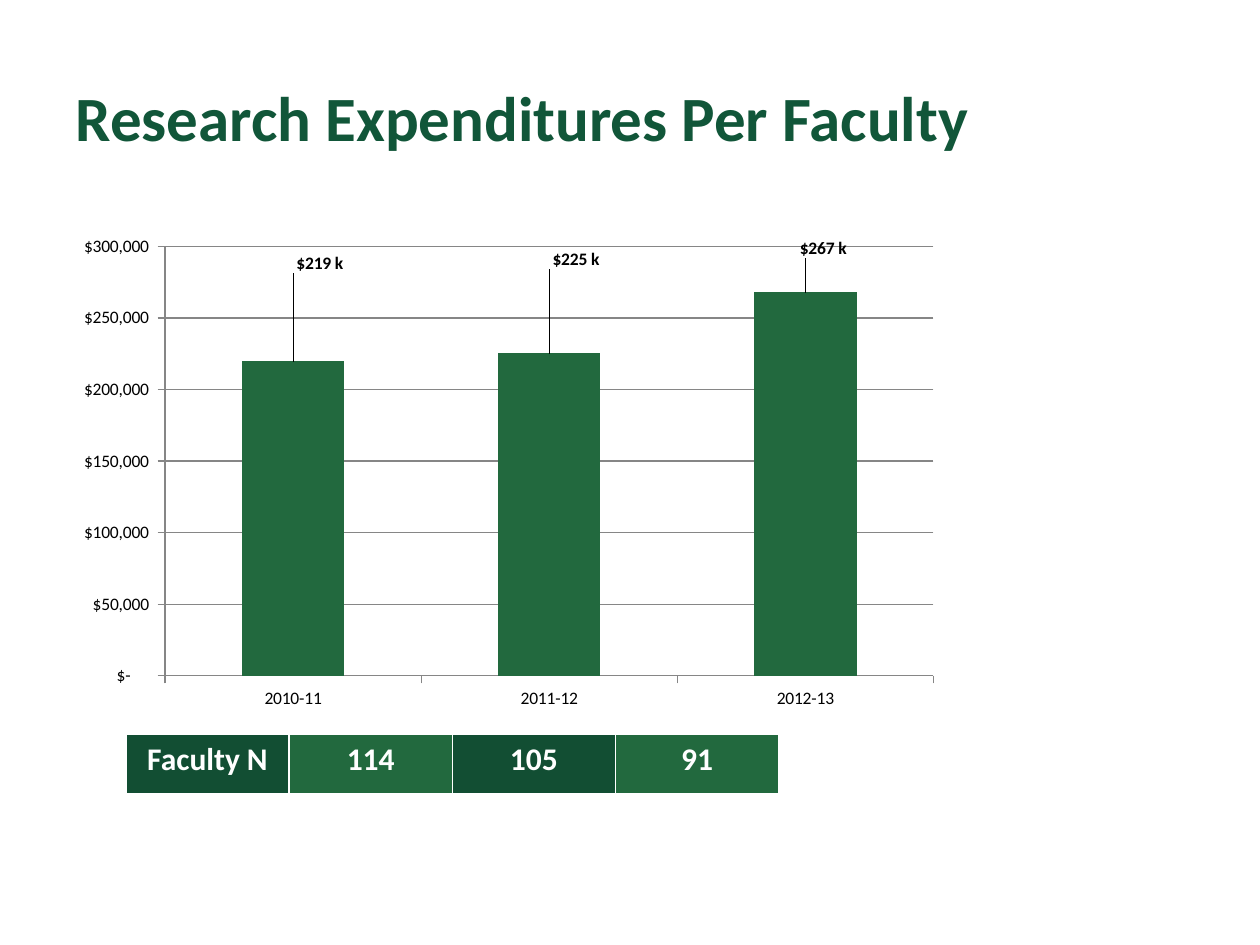
from dataclasses import dataclass

from lxml.etree import SubElement
from pptx import Presentation
from pptx.chart.data import CategoryChartData
from pptx.dml.color import RGBColor
from pptx.enum.chart import XL_CHART_TYPE as ChartType
from pptx.enum.chart import XL_LABEL_POSITION as LabelPosition
from pptx.enum.chart import XL_TICK_MARK as TickMark
from pptx.enum.text import MSO_ANCHOR as Anchor
from pptx.enum.text import PP_ALIGN as Align
from pptx.oxml.ns import qn
from pptx.util import Inches, Pt


@dataclass(frozen=True)
class Theme:
    font: str = "Calibri"
    title: str = "115639"
    dark: str = "124E33"
    bar: str = "22693E"
    grid: str = "868686"
    ink: str = "000000"
    paper: str = "FFFFFF"
    title_size: int = 36
    table_size: int = 18
    chart_size: int = 10


@dataclass(frozen=True)
class Area:
    x: float
    y: float
    w: float
    h: float

    def box(self) -> tuple[int, int, int, int]:
        return (int(WIDTH * self.x), int(HEIGHT * self.y),
                int(WIDTH * self.w), int(HEIGHT * self.h))


@dataclass(frozen=True)
class Year:
    name: str
    spending: int
    label: str
    faculty: str
    shift_x: float
    shift_y: float


THEME = Theme()
WIDTH, HEIGHT = Inches(10), Inches(7.5)
TITLE_AREA = Area(0.05, 0.04, 0.9, 0.167)
CHART_AREA = Area(0.05, 0.24, 0.705, 0.519)
TABLE_AREA = Area(0.1, 0.777, 0.518, 0.065)
PLOT_AREA = {"x": 0.115, "y": 0.04, "w": 0.865, "h": 0.876}
DOLLARS = r'_("$"* #,##0_);_("$"* \(#,##0\);_("$"* "-"??_);_(@_)'
YEARS = [
    Year("2010-11", 219577, " $219 k ", "114", 0.03, -0.17),
    Year("2011-12", 225305, " $225 k ", "105", 0.03, -0.16),
    Year("2012-13", 267756, " $267 k ", "91", 0.02, -0.06),
]
BORDERS = {"a:lnL": 1, "a:lnR": 1, "a:lnT": 1, "a:lnB": 3}


def assign(target, **values) -> None:
    for key, value in values.items():
        setattr(target, key, value)


def style_font(font, size: int, color: str, bold: bool) -> None:
    assign(font, name=THEME.font, size=Pt(size), bold=bold)
    font.color.rgb = RGBColor.from_string(color)


def place(shape, area: Area) -> None:
    assign(shape, **dict(zip(("left", "top", "width", "height"), area.box())))


def manual_layout(parent, index: int, **values) -> None:
    for existing in parent.findall(qn("c:layout")):
        parent.remove(existing)
    layout = SubElement(parent, qn("c:layout"))
    manual = SubElement(layout, qn("c:manualLayout"))
    for tag, value in values.items():
        SubElement(manual, qn(f"c:{tag}")).set("val", str(value))
    parent.insert(index, layout)


def draw_title(slide, wording: str) -> None:
    heading = slide.shapes.title
    place(heading, TITLE_AREA)
    heading.text_frame.vertical_anchor = Anchor.MIDDLE
    paragraph = heading.text_frame.paragraphs[0]
    paragraph.alignment = Align.LEFT
    run = paragraph.add_run()
    run.text = wording
    style_font(run.font, THEME.title_size, THEME.title, True)


def label_bar(point, year: Year) -> None:
    label = point.data_label
    run = label.text_frame.paragraphs[0].add_run()
    run.text = year.label
    style_font(run.font, THEME.chart_size, THEME.ink, True)
    label.position = LabelPosition.OUTSIDE_END
    element = label.text_frame._txBody.getparent().getparent()
    manual_layout(element, 1, x=year.shift_x, y=year.shift_y)


def draw_chart(slide) -> None:
    spending = CategoryChartData(number_format=DOLLARS)
    spending.categories = [year.name for year in YEARS]
    spending.add_series("Series 1", [year.spending for year in YEARS])
    chart = slide.shapes.add_chart(
        ChartType.COLUMN_CLUSTERED, *CHART_AREA.box(), spending).chart
    assign(chart, has_legend=False, has_title=False)
    style_font(chart.font, THEME.chart_size, THEME.ink, False)

    dollars = chart.value_axis
    assign(dollars, minimum_scale=0, maximum_scale=300000, major_unit=50000,
           has_major_gridlines=True)
    assign(dollars.tick_labels, number_format=DOLLARS,
           number_format_is_linked=False)
    for axis in (chart.category_axis, dollars):
        assign(axis, major_tick_mark=TickMark.OUTSIDE,
               minor_tick_mark=TickMark.NONE)
    for lines in (chart.category_axis, dollars, dollars.major_gridlines):
        lines.format.line.color.rgb = RGBColor.from_string(THEME.grid)
        lines.format.line.width = Pt(0.75)

    plot = chart.plots[0]
    assign(plot, gap_width=150, vary_by_categories=False)
    bars = plot.series[0]
    bars.format.fill.solid()
    bars.format.fill.fore_color.rgb = RGBColor.from_string(THEME.bar)
    assign(bars.data_labels, show_value=True, number_format=DOLLARS,
           number_format_is_linked=False)
    style_font(bars.data_labels.font, THEME.chart_size, THEME.ink, True)
    for index, year in enumerate(YEARS):
        label_bar(bars.points[index], year)
    manual_layout(chart._chartSpace.chart.plotArea, 0, layoutTarget="inner",
                  xMode="edge", yMode="edge", **PLOT_AREA)


def draw_cell(cell, wording: str, fill: str) -> None:
    properties = cell._tc.get_or_add_tcPr()
    for tag, points in BORDERS.items():
        line = SubElement(properties, qn(tag), w=str(Pt(points)))
        solid = SubElement(line, qn("a:solidFill"))
        SubElement(solid, qn("a:srgbClr"), val=THEME.paper)
    cell.fill.solid()
    cell.fill.fore_color.rgb = RGBColor.from_string(fill)
    paragraph = cell.text_frame.paragraphs[0]
    paragraph.alignment = Align.CENTER
    run = paragraph.add_run()
    run.text = wording
    style_font(run.font, THEME.table_size, THEME.paper, True)


def draw_table(slide) -> None:
    wordings = ["Faculty N"] + [year.faculty for year in YEARS]
    faculty = slide.shapes.add_table(
        1, len(wordings), *TABLE_AREA.box()).table
    for column, wording in enumerate(wordings):
        fill = THEME.bar if column % 2 else THEME.dark
        draw_cell(faculty.cell(0, column), wording, fill)


def main() -> None:
    deck = Presentation()
    assign(deck, slide_width=WIDTH, slide_height=HEIGHT)
    slide = deck.slides.add_slide(deck.slide_layouts[5])
    draw_title(slide, "Research Expenditures Per Faculty")
    draw_chart(slide)
    draw_table(slide)
    deck.save("out.pptx")


if __name__ == "__main__":
    main()
